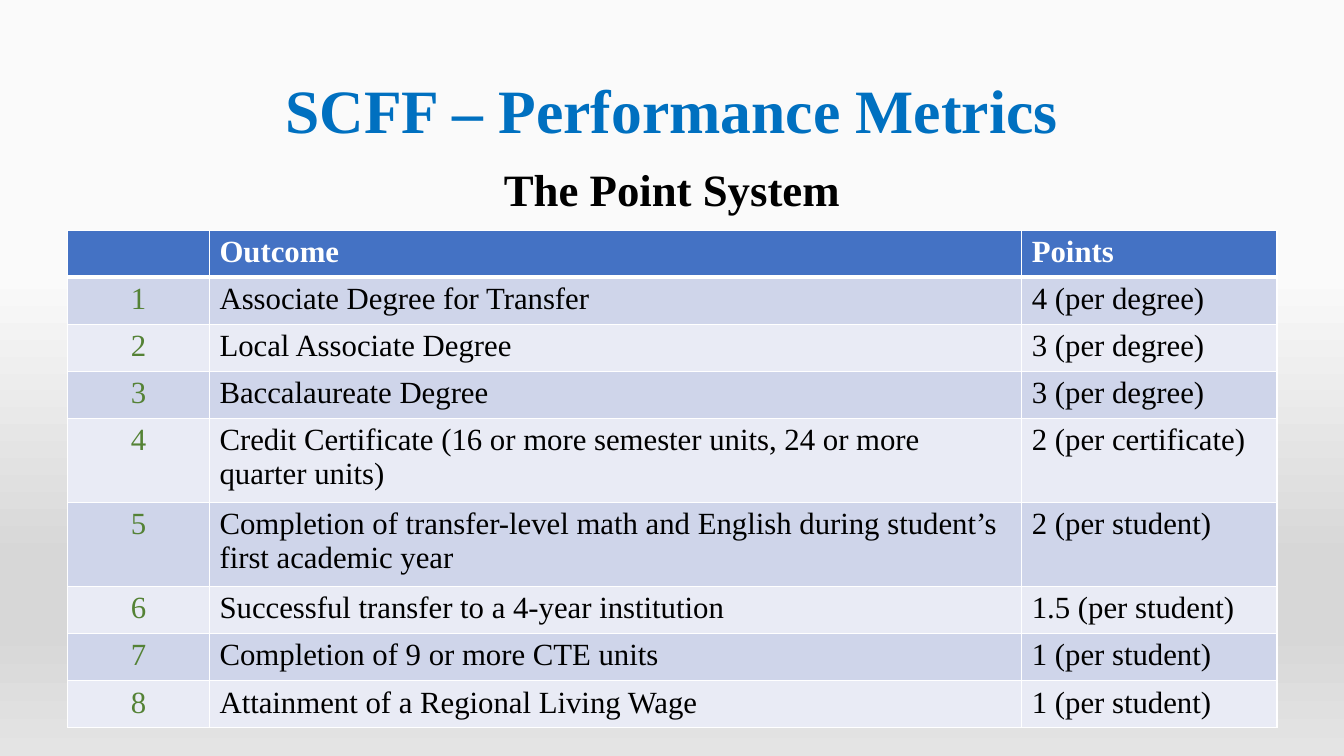
from pptx import Presentation
from pptx import util as u
from pptx.dml.color import RGBColor
from pptx.enum import text
from pptx.oxml import parse_xml
from pptx.oxml.ns import nsdecls

FONT = "Times New Roman"
COLORS = {
    "title": "0070C0", "text": "000000", "number": "548235", "white": "FFFFFF",
    "header": "4472C4", "odd": "CFD5EA", "even": "E9EBF5",
}
BACKGROUND = [(36, "FAFAFA"), (74, "D7D7D7"), (83, "D7D7D7"), (100, "E4E4E4")]
COLUMN_WIDTHS = [3.58, 20.47, 6.43]
OUTCOMES = [
    ("Associate Degree for Transfer", "4 (per degree)"),
    ("Local Associate Degree", "3 (per degree)"),
    ("Baccalaureate Degree", "3 (per degree)"),
    ("Credit Certificate (16 or more semester units, 24 or more quarter units)",
     "2 (per certificate)"),
    ("Completion of transfer-level math and English during student’s first academic year",
     "2 (per student)"),
    ("Successful transfer to a 4-year institution", "1.5 (per student)"),
    ("Completion of 9 or more CTE units", "1 (per student)"),
    ("Attainment of a Regional Living Wage", "1 (per student)"),
]
TWO_LINE_ROWS = (4, 5)


def set_background(s):
    """Fill the slide background with a vertical grey gradient."""
    stops = "".join(
        f'<a:gs pos="{pos * 1000}"><a:srgbClr val="{color}"/></a:gs>'
        for pos, color in BACKGROUND)
    s.element.cSld.insert(0, parse_xml(
        f'<p:bg {nsdecls("p", "a")}><p:bgPr><a:gradFill rotWithShape="1">'
        f'<a:gsLst>{stops}</a:gsLst><a:lin ang="5400000" scaled="0"/></a:gradFill>'
        '<a:effectLst/></p:bgPr></p:bg>'))


def style(p, size, color, bold=False, align=text.PP_ALIGN.LEFT):
    """Set the font and alignment of a paragraph."""
    p.alignment = align
    p.font.name = FONT
    p.font.size = u.Pt(size)
    p.font.bold = bold
    p.font.color.rgb = RGBColor.from_string(COLORS[color])


def add_heading(s, words, top, height, size, color, anchor):
    """Add a centred bold heading."""
    sp = s.shapes.add_textbox(u.Cm(2.33), u.Cm(top), u.Cm(29.21), u.Cm(height))
    tf = sp.text_frame
    tf.word_wrap = True
    tf.vertical_anchor = anchor
    p = tf.paragraphs[0]
    p.text = words
    p.line_spacing = 0.9
    style(p, size, color, True, text.PP_ALIGN.CENTER)


def set_borders(cell, top, bottom):
    """Draw white cell borders, with top and bottom widths in points."""
    widths = {"L": 1, "R": 1, "T": top, "B": bottom}
    for i, (side, width) in enumerate(widths.items()):
        cell._tc.get_or_add_tcPr().insert(i, parse_xml(
            f'<a:ln{side} {nsdecls("a")} w="{u.Pt(width)}"><a:solidFill>'
            f'<a:srgbClr val="{COLORS["white"]}"/></a:solidFill></a:ln{side}>'))


def fill_cell(cell, words, row, col):
    """Write and format one table cell."""
    header = row == 0
    fill = "header" if header else "odd" if row % 2 else "even"
    cell.fill.solid()
    cell.fill.fore_color.rgb = RGBColor.from_string(COLORS[fill])
    set_borders(cell, 3 if row == 1 else 1, 3 if header else 1)
    p = cell.text_frame.paragraphs[0]
    p.text = words
    color = "white" if header else "text" if col else "number"
    align = text.PP_ALIGN.LEFT if col else text.PP_ALIGN.CENTER
    style(p, 22, color, header, align)


def add_points_table(s):
    """Add the table of outcomes and points."""
    rows = [("", "Outcome", "Points")]
    rows += [(str(n), *outcome) for n, outcome in enumerate(OUTCOMES, 1)]
    heights = [1.97 if i in TWO_LINE_ROWS else 1.07 for i in range(len(rows))]
    table = s.shapes.add_table(
        len(rows), len(COLUMN_WIDTHS), u.Cm(1.7), u.Cm(5.8),
        u.Cm(sum(COLUMN_WIDTHS)), u.Cm(sum(heights))).table
    for column, width in zip(table.columns, COLUMN_WIDTHS):
        column.width = u.Cm(width)
    for i, row in enumerate(rows):
        table.rows[i].height = u.Cm(heights[i])
        for j, words in enumerate(row):
            fill_cell(table.cell(i, j), words, i, j)


def main():
    """Build and save the slide."""
    prs = Presentation()
    prs.slide_width, prs.slide_height = u.Cm(33.87), u.Cm(19.05)
    s = prs.slides.add_slide(prs.slide_layouts[6])
    set_background(s)
    add_heading(s, "SCFF – Performance Metrics", 1.01, 3.68, 44, "title",
                text.MSO_ANCHOR.MIDDLE)
    add_heading(s, "The Point System", 4.1, 13.59, 32, "text", text.MSO_ANCHOR.TOP)
    add_points_table(s)
    prs.save("out.pptx")


if __name__ == "__main__":
    main()
